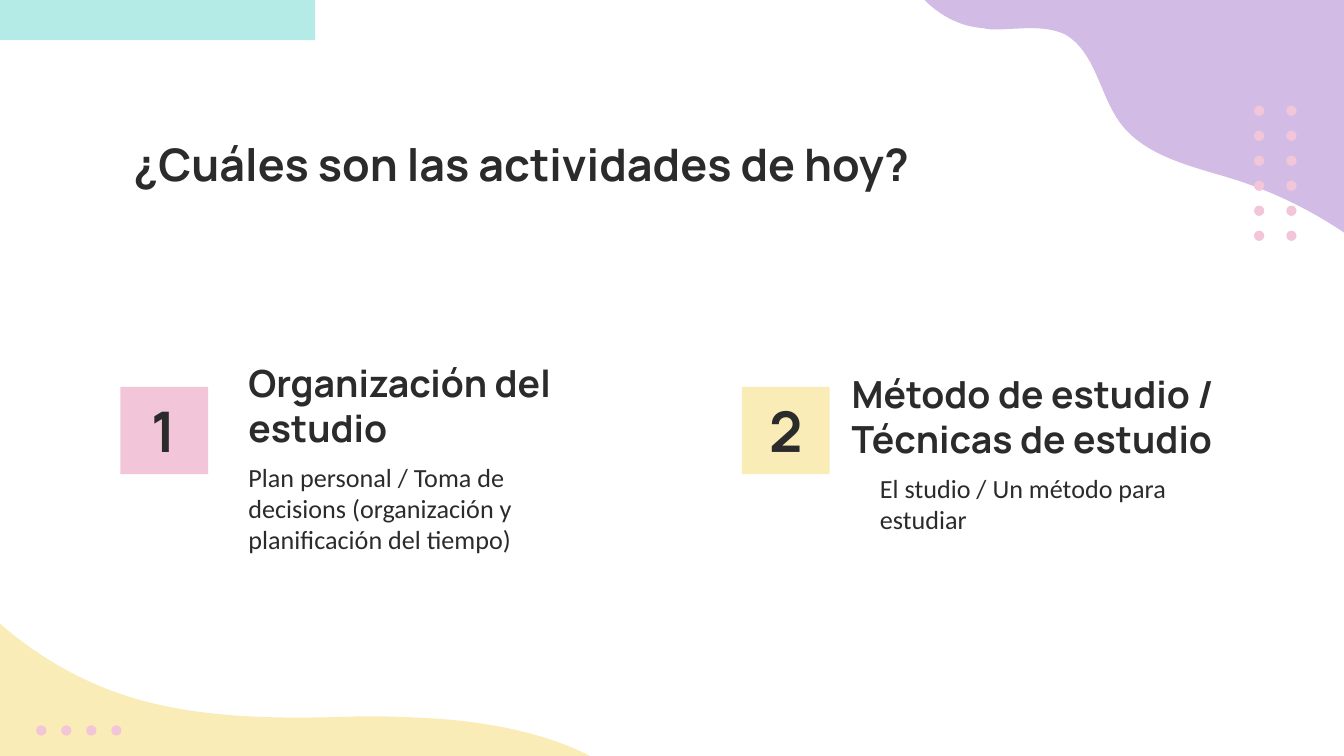
from dataclasses import dataclass

from pptx import Presentation
from pptx.dml.color import RGBColor
from pptx.enum.shapes import MSO_SHAPE
from pptx.enum.text import MSO_ANCHOR, PP_ALIGN
from pptx.shapes.autoshape import Shape
from pptx.slide import Slide
from pptx.util import Pt

RECTANGLE, OVAL = MSO_SHAPE.RECTANGLE, MSO_SHAPE.OVAL
TOP, MIDDLE, BOTTOM = MSO_ANCHOR.TOP, MSO_ANCHOR.MIDDLE, MSO_ANCHOR.BOTTOM
LEFT, CENTER = PP_ALIGN.LEFT, PP_ALIGN.CENTER

COLORS = {
    "mint": "B5EBE7",
    "yellow": "FAECB6",
    "pink": "F3C5D8",
    "purple": "D2BCE6",
    "ink": "2B2B2B",
}
HEADING_FONT, BODY_FONT = "Manrope", "Calibri"
INSET = 7.2
DOT_SIZE = 5.5
DOT_STEP = 13.4
CURVE_STEPS = 16

Point = tuple[float, float]
Curve = tuple[Point, Point, Point]


@dataclass(frozen=True)
class Box:
    left: float
    top: float
    width: float
    height: float


@dataclass(frozen=True)
class TextStyle:
    size: float
    font: str = HEADING_FONT
    bold: bool = True
    anchor: MSO_ANCHOR = TOP
    align: PP_ALIGN = LEFT


@dataclass(frozen=True)
class Blob:
    color: str
    corners: list[Point]
    curves: list[Curve]


@dataclass(frozen=True)
class DotGrid:
    left: float
    top: float
    columns: int
    rows: int
    column_step: float


@dataclass(frozen=True)
class Activity:
    number: str
    color: str
    number_left: float
    heading: str
    heading_box: Box
    detail: str
    detail_box: Box


TITLE_STYLE = TextStyle(24)
NUMBER_STYLE = TextStyle(30, anchor=MIDDLE, align=CENTER)
HEADING_STYLE = TextStyle(20, anchor=BOTTOM)
DETAIL_STYLE = TextStyle(14, font=BODY_FONT, bold=False)

YELLOW_BLOB = Blob(
    "yellow",
    [(-33.1, 298.1), (-33.1, 548), (318.2, 548), (318.2, 406.1)],
    [
        ((293.8, 393.1), (264.2, 387.4), (236.2, 385.2)),
        ((223.9, 384.5), (211, 383.8), (198.7, 383.8)),
        ((186.5, 383.8), (174.2, 384.5), (162, 384.5)),
        ((133.9, 384.5), (105.1, 383), (77.8, 375.8)),
        ((33.1, 364.3), (-5.8, 335.5), (-33.1, 298.1)),
    ],
)
PURPLE_BLOB = Blob(
    "purple",
    [(730.1, 131.8), (730.1, -47.5), (493.9, -47.5), (493.9, -1.4)],
    [
        ((502.6, 7.9), (514.1, 14.4), (527, 15.1)),
        ((529.2, 15.8), (531.4, 15.8), (532.8, 15.8)),
        ((539.3, 15.8), (545.8, 15.1), (551.5, 15.1)),
        ((558.7, 15.1), (565.2, 15.8), (571, 18.7)),
        ((586.8, 28.1), (589, 50.4), (599.8, 65.5)),
        ((613.4, 84.2), (639.4, 89.3), (662.4, 96.5)),
        ((686.9, 104.4), (709.9, 116.6), (730.1, 131.8)),
    ],
)
BOTTOM_DOTS = DotGrid(19.4, 388.6, 4, 1, DOT_STEP)
SIDE_DOTS = DotGrid(671.8, 56.6, 2, 6, 17.3)

ACTIVITIES = [
    Activity(
        "1", "pink", 64.5,
        "Organización del estudio", Box(126, 219.6, 190, 28.8),
        "Plan personal / Toma de decisions (organización y planificación del tiempo)",
        Box(126, 239.8, 190, 38.2),
    ),
    Activity(
        "2", "yellow", 397.5,
        "Método de estudio / Técnicas de estudio", Box(449.2, 225.2, 240, 28.8),
        "El studio / Un método para estudiar", Box(464.3, 245.8, 190, 38.2),
    ),
]


def paint(shape: Shape, color: str) -> None:
    shape.shadow.inherit = False
    shape.fill.solid()
    shape.fill.fore_color.rgb = RGBColor.from_string(COLORS[color])
    shape.line.fill.background()


def add_filled(slide: Slide, kind: MSO_SHAPE, box: Box, color: str) -> Shape:
    shape = slide.shapes.add_shape(
        kind, Pt(box.left), Pt(box.top), Pt(box.width), Pt(box.height)
    )
    paint(shape, color)
    return shape


def write(shape: Shape, text: str, style: TextStyle) -> None:
    frame = shape.text_frame
    frame.word_wrap = True
    frame.vertical_anchor = style.anchor
    frame.margin_left = frame.margin_right = Pt(INSET)
    frame.margin_top = frame.margin_bottom = Pt(INSET)
    paragraph = frame.paragraphs[0]
    paragraph.text = text
    paragraph.alignment = style.align
    paragraph.font.size = Pt(style.size)
    paragraph.font.name = style.font
    paragraph.font.bold = style.bold
    paragraph.font.color.rgb = RGBColor.from_string(COLORS["ink"])


def add_text(slide: Slide, box: Box, text: str, style: TextStyle) -> None:
    shape = slide.shapes.add_textbox(
        Pt(box.left), Pt(box.top), Pt(box.width), Pt(box.height)
    )
    write(shape, text, style)


def curve_points(start: Point, curve: Curve) -> list[Point]:
    points = []
    for step in range(1, CURVE_STEPS + 1):
        t = step / CURVE_STEPS
        weights = ((1 - t) ** 3, 3 * t * (1 - t) ** 2, 3 * t**2 * (1 - t), t**3)
        x, y = (
            sum(weight * value for weight, value in zip(weights, axis))
            for axis in zip(start, *curve)
        )
        points.append((x, y))
    return points


def add_blob(slide: Slide, blob: Blob) -> None:
    points = list(blob.corners)
    for curve in blob.curves:
        points += curve_points(points[-1], curve)
    vertices = [(Pt(x), Pt(y)) for x, y in points]
    builder = slide.shapes.build_freeform(*vertices[0])
    builder.add_line_segments(vertices[1:], close=True)
    paint(builder.convert_to_shape(), blob.color)


def add_dots(slide: Slide, grid: DotGrid) -> None:
    for column in range(grid.columns):
        for row in range(grid.rows):
            left = grid.left + column * grid.column_step
            top = grid.top + row * DOT_STEP
            add_filled(slide, OVAL, Box(left, top, DOT_SIZE, DOT_SIZE), "pink")


def add_activity(slide: Slide, activity: Activity) -> None:
    square = Box(activity.number_left, 207.2, 47, 46.8)
    write(add_filled(slide, RECTANGLE, square, activity.color), activity.number, NUMBER_STYLE)
    add_text(slide, activity.heading_box, activity.heading, HEADING_STYLE)
    add_text(slide, activity.detail_box, activity.detail, DETAIL_STYLE)


def main() -> None:
    presentation = Presentation()
    presentation.slide_width, presentation.slide_height = Pt(720), Pt(405)
    slide = presentation.slides.add_slide(presentation.slide_layouts[6])
    add_filled(slide, RECTANGLE, Box(0, 0, 168.8, 21.6), "mint")
    add_blob(slide, YELLOW_BLOB)
    add_dots(slide, BOTTOM_DOTS)
    add_text(slide, Box(64.5, 66.2, 462.2, 40.3), "¿Cuáles son las actividades de hoy?", TITLE_STYLE)
    for activity in ACTIVITIES:
        add_activity(slide, activity)
    add_blob(slide, PURPLE_BLOB)
    add_dots(slide, SIDE_DOTS)
    presentation.save("out.pptx")


if __name__ == "__main__":
    main()
